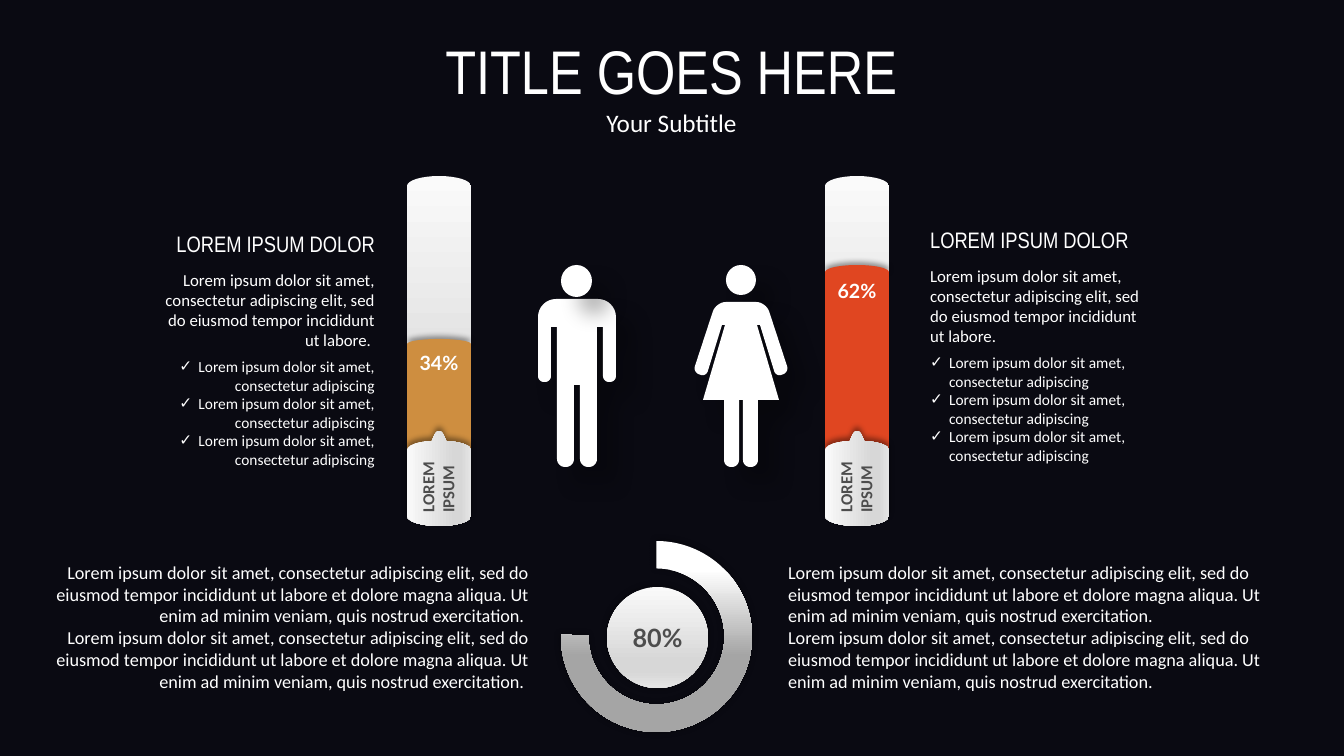
import math
from dataclasses import dataclass

import pptx
import pptx.dml.color
import pptx.enum.shapes
import pptx.enum.text
import pptx.oxml.ns
import pptx.util
from lxml import etree

KIND = pptx.enum.shapes.MSO_SHAPE
ALIGN = pptx.enum.text.PP_ALIGN
ANCHOR = pptx.enum.text.MSO_ANCHOR
tag = pptx.oxml.ns.qn
rgb = pptx.dml.color.RGBColor.from_string

SCALE = 12192000 / 1344

POINT = "Lorem ipsum dolor sit amet, consectetur adipiscing"
SHORT = POINT + " elit, sed do eiusmod tempor incididunt ut labore."
LONG = (POINT + " elit, sed do eiusmod tempor incididunt ut labore et dolore"
        " magna aliqua. Ut enim ad minim veniam, quis nostrud exercitation.")


@dataclass(frozen=True)
class Theme:
    back: str = "0A0A12"
    white: str = "FFFFFF"
    dark: str = "4D4D4D"
    gold: str = "CE8E40"
    red: str = "E04621"
    metal: tuple = ((0, "FAFAFA"), (74, "D7D7D7"), (83, "D7D7D7"), (100, "E4E4E4"))
    fade: tuple = ((0, "FFFFFF"), (15, "FFFFFF"), (60, "A5A5A5"), (100, "A5A5A5"))
    head: str = "Arial Narrow"
    body: str = "Calibri"
    digit: str = "Lato"
    title: int = 44
    big: int = 18
    mid: int = 16
    share: int = 14
    long: int = 13
    small: int = 12
    point: int = 11


def px(value):
    return pptx.util.Emu(round(value * SCALE))


def arc(x, y, wide, high, start, end, steps=16):
    """Points on an ellipse, angles clockwise from the right."""
    turns = [math.radians(start + (end - start) * i / steps) for i in range(steps + 1)]
    return [(x + wide * math.cos(t), y + high * math.sin(t)) for t in turns]


def bend(a, b, c, d, steps=8):
    """Points on a cubic curve."""
    return [tuple((1 - t) ** 3 * p + 3 * t * (1 - t) ** 2 * q + 3 * t * t * (1 - t) * r
                  + t ** 3 * s for p, q, r, s in zip(a, b, c, d))
            for t in (i / steps for i in range(steps + 1))]


def toward(a, b, part):
    return tuple(p + (q - p) * part for p, q in zip(a, b))


def soften(spots):
    """Round each corner given as x, y, radius."""
    out = []
    for i, (x, y, size) in enumerate(spots):
        here, last, after = (x, y), spots[i - 1][:2], spots[(i + 1) % len(spots)][:2]
        if not size:
            out.append(here)
            continue
        a = toward(here, last, size / math.dist(here, last))
        d = toward(here, after, size / math.dist(here, after))
        out += bend(a, toward(here, a, 0.45), toward(here, d, 0.45), d)
    return out


def write(frame, text, size, font, color, bold=False, align=ALIGN.LEFT,
          before=0, mark=None):
    """Add one paragraph to a text frame."""
    para = frame.paragraphs[0]
    if para.runs:
        para = frame.add_paragraph()
    para.alignment, para.line_spacing = align, 1.0
    para.space_before, para.space_after = pptx.util.Pt(before), pptx.util.Pt(0)
    props = para._p.get_or_add_pPr()
    props.set("marL", str(px(19) if mark else 0))
    props.set("indent", str(px(-19) if mark else 0))
    if mark:
        etree.SubElement(props, tag("a:buChar"), char=mark)
    else:
        etree.SubElement(props, tag("a:buNone"))
    run = para.add_run()
    run.text = text
    run.font.size, run.font.name, run.font.bold = pptx.util.Pt(size), font, bold
    run.font.color.rgb = rgb(color)


class Board:
    """Holds the theme and the current slide."""

    def __init__(self, slide, theme):
        self.slide, self.theme = slide, theme
        slide.background.fill.solid()
        slide.background.fill.fore_color.rgb = rgb(theme.back)

    def paint(self, shape, fill, angle=90, shade=None):
        """Fill with a colour or with stops; shade is alpha, blur, distance, angle."""
        shape.line.fill.background()
        shape.shadow.inherit = False
        if isinstance(fill, str):
            shape.fill.solid()
            shape.fill.fore_color.rgb = rgb(fill)
        else:
            shape.fill.gradient()
            shape.fill.gradient_angle = (360 - angle) % 360
            stops = shape._element.spPr.find(".//" + tag("a:gsLst"))
            for old in list(stops):
                stops.remove(old)
            for spot, color in fill:
                stop = etree.SubElement(stops, tag("a:gs"), pos=str(spot * 1000))
                etree.SubElement(stop, tag("a:srgbClr"), val=color)
        if shade:
            alpha, blur, gap, turn = shade
            drop = etree.SubElement(
                shape._element.spPr.find(tag("a:effectLst")), tag("a:outerShdw"),
                blurRad=str(blur * 12700), dist=str(gap * 12700),
                dir=str(turn * 60000), rotWithShape="0")
            tone = etree.SubElement(drop, tag("a:srgbClr"), val="000000")
            etree.SubElement(tone, tag("a:alpha"), val=str(alpha * 1000))
        return shape

    def shape(self, kind, x, y, w, h, fill, **look):
        made = self.slide.shapes.add_shape(kind, px(x), px(y), px(w), px(h))
        return self.paint(made, fill, **look)

    def outline(self, points, fill, **look):
        spots = [(px(x), px(y)) for x, y in points]
        pen = self.slide.shapes.build_freeform(*spots[0], scale=1.0)
        pen.add_line_segments(spots[1:], close=True)
        return self.paint(pen.convert_to_shape(), fill, **look)

    def label(self, x, y, w, h, text, turn=0, **form):
        box = self.slide.shapes.add_textbox(px(x), px(y), px(w), px(h))
        box.rotation = turn
        frame = box.text_frame
        frame.word_wrap = True
        frame.margin_left = frame.margin_right = px(7)
        frame.margin_top = frame.margin_bottom = px(3)
        write(frame, text, bold=True, **form)

    def holder(self, index, x, y, w, h):
        """Move a placeholder and return its text frame."""
        box = self.slide.placeholders[index]
        box.left, box.top, box.width, box.height = px(x), px(y), px(w), px(h)
        frame = box.text_frame
        frame.word_wrap, frame.vertical_anchor = True, ANCHOR.TOP
        frame.auto_size = pptx.enum.text.MSO_AUTO_SIZE.NONE
        return frame

    def person(self, axis, half):
        """Draw a body from its right half, given as offsets from the axis."""
        right = [(axis + x, y, size) for x, y, size in half]
        left = [(axis - x, y, size) for x, y, size in reversed(half)]
        self.outline(soften(right + left), self.theme.white, shade=(30, 15, 18, 45))

    def face(self, x, y, w, h):
        self.shape(KIND.OVAL, x, y, w, h, self.theme.white, shade=(30, 15, 18, 45))

    def tube(self, x, level, dome, share, color):
        look, mid = self.theme, x + 32
        base = arc(mid, 516, 32, 10, 0, 180)
        self.outline(arc(mid, 186, 32, 10, 180, 360) + base, look.metal)
        self.shape(KIND.OVAL, x, level - dome / 2, 64, dome, color, shade=(40, 4, 2, 270))
        self.shape(KIND.RECTANGLE, x, level, 64, 511 - level, color)
        self.label(x, level + 4, 64, 30, share, size=look.share, font=look.digit,
                   color=look.white, align=ALIGN.CENTER)
        rim = bend((x, 450), (x, 446), (x + 8, 442), (mid - 7, 441))
        rim += bend((mid - 7, 441), (mid - 5, 435), (mid - 3, 431), (mid, 431))
        rim += [(2 * mid - a, b) for a, b in reversed(rim)]
        self.outline(rim + base, look.metal, angle=0, shade=(40, 4, 3, 270))
        self.label(x - 13, 452, 88, 47, "LOREM IPSUM", turn=270, size=look.small,
                   font=look.body, color=look.dark)

    def ring(self, x, y, size, share):
        look, glow = self.theme, (40, 5, 0, 0)
        band = self.shape(KIND.BLOCK_ARC, x, y, size, size, look.fade, shade=glow)
        for i, value in enumerate((270 * 0.6, 181 * 0.6, 0.144)):
            band.adjustments[i] = value
        core = self.shape(KIND.OVAL, x + 46, y + 46, 101, 101, look.metal, shade=glow)
        core.text_frame.vertical_anchor = ANCHOR.MIDDLE
        write(core.text_frame, share, look.big, look.digit, look.dark, bold=True,
              align=ALIGN.CENTER)

    def column(self, index, x, y, low, align, tail=""):
        """Fill one side: the list above and the long text at the bottom."""
        look = self.theme
        form = dict(font=look.body, color=look.white, align=align)
        frame = self.holder(index + 1, x, y, 242, 273)
        write(frame, "LOREM IPSUM DOLOR", look.mid, look.head, look.white, align=align)
        write(frame, SHORT + tail, look.small, before=9, **form)
        for i in range(3):
            write(frame, POINT, look.point, before=0 if i else 5, mark="✓", **form)
        frame = self.holder(index, low, 556, 521, 142)
        for _ in range(2):
            write(frame, LONG + tail, look.long, **form)


def main():
    deck = pptx.Presentation()
    deck.slide_width, deck.slide_height = px(1344), px(756)
    look = Theme()
    board = Board(deck.slides.add_slide(deck.slide_layouts[4]), look)

    frame = board.holder(0, 368, 28, 607, 115)
    write(frame, "TITLE GOES HERE", look.title, look.head, look.white, align=ALIGN.CENTER)
    write(frame, "Your Subtitle", look.big, look.body, look.white, align=ALIGN.CENTER)

    board.person(577, [(39, 299, 18), (39, 382, 6), (26, 382, 6), (26, 327, 0),
                       (20, 327, 0), (20, 467, 8), (3, 467, 8), (3, 385, 0)])
    board.face(561, 265, 31, 32)
    board.face(726, 265, 30, 30)
    board.person(741, [(25, 302, 10), (48, 372, 6), (35, 377, 6), (19, 325, 0),
                       (16, 325, 0), (38, 400, 0), (17, 400, 0), (17, 467, 7),
                       (2, 467, 7), (2, 400, 0)])
    board.tube(825, 272, 14, "62%", look.red)
    board.tube(407, 344, 10, "34%", look.gold)
    board.column(3, 920, 221, 778, ALIGN.LEFT)
    board.column(1, 143, 225, 17, ALIGN.RIGHT, tail=" ")
    board.ring(561, 541, 191, "80%")
    deck.save("out.pptx")


if __name__ == "__main__":
    main()
